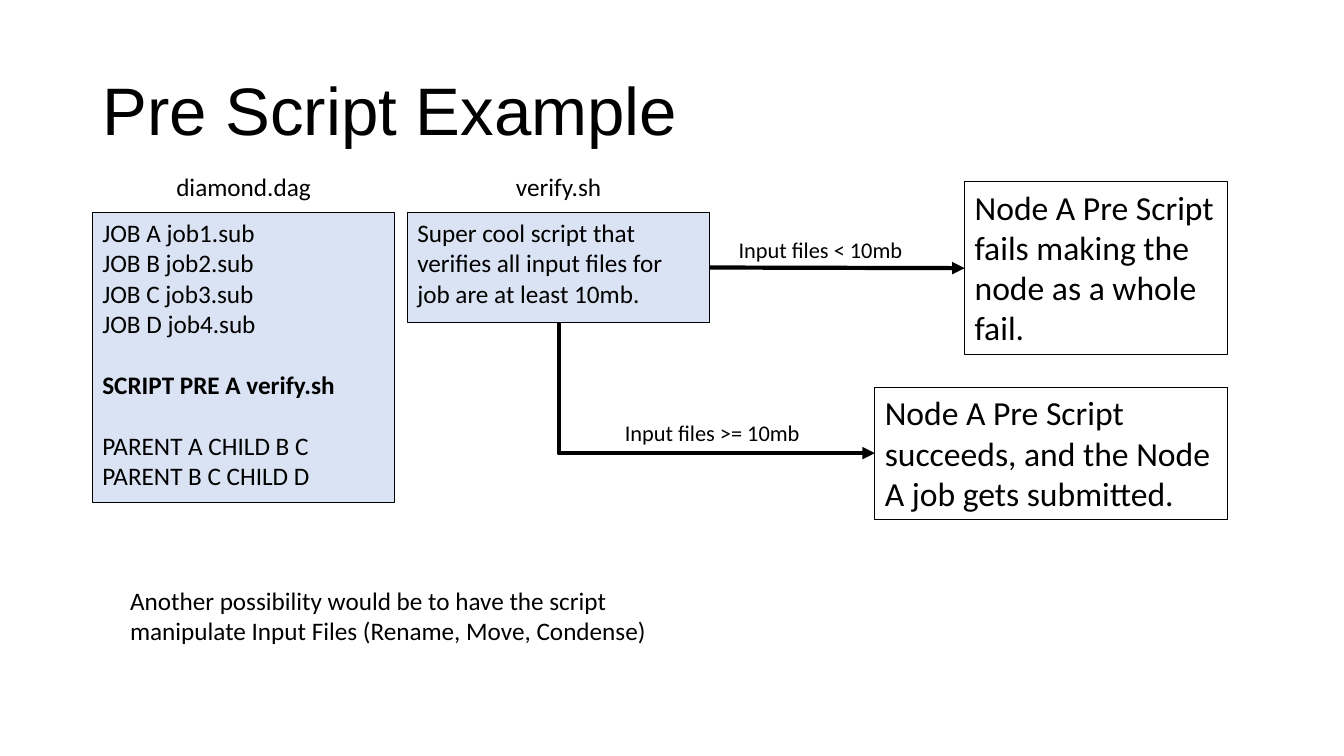
from dataclasses import dataclass

from lxml import etree
from pptx import Presentation
from pptx.dml.color import RGBColor
from pptx.enum.shapes import MSO_CONNECTOR, MSO_SHAPE
from pptx.enum.text import MSO_ANCHOR, PP_ALIGN
from pptx.oxml.ns import qn
from pptx.util import Inches, Pt

RECT = MSO_SHAPE.RECTANGLE
STRAIGHT, ELBOW = MSO_CONNECTOR.STRAIGHT, MSO_CONNECTOR.ELBOW
LEFT, CENTER = PP_ALIGN.LEFT, PP_ALIGN.CENTER
TOP, MIDDLE = MSO_ANCHOR.TOP, MSO_ANCHOR.MIDDLE
BOTTOM_SITE, LEFT_SITE, RIGHT_SITE = 2, 1, 3
COLS, ROWS = 32, 18


@dataclass
class Theme:
    ink: RGBColor = RGBColor(0, 0, 0)
    tint: RGBColor = RGBColor(0xDA, 0xE3, 0xF3)
    head_font: str = "Arial"
    font: str = "Calibri"
    head: int = 48
    large: int = 24
    body: int = 18
    small: int = 16
    gap: int = 22  # one line of body text
    edge: float = 1
    thin: float = 0.75
    thick: float = 3


def write(shape, text, *, size, color, font, align=LEFT, anchor=TOP,
          space=None, bold=(), gaps=(), gap=0):
    """Fill a shape, one paragraph a line; bold and gaps hold line numbers."""
    frame = shape.text_frame
    frame.word_wrap = True
    frame.vertical_anchor = anchor
    frame.text = text
    for num, para in enumerate(frame.paragraphs):
        para.alignment = align
        if space:
            para.line_spacing = space
        if num in gaps:
            para.space_before = Pt(gap)
        face = para.font
        face.name, face.size, face.bold = font, Pt(size), num in bold
        face.color.rgb = color


class Deck:
    def __init__(self, theme):
        self.theme = theme
        self.file = Presentation()
        self.file.slide_width = Inches(13.33)
        self.file.slide_height = Inches(7.5)
        self.col = self.file.slide_width / COLS
        self.row = self.file.slide_height / ROWS
        slide = self.file.slides.add_slide(self.file.slide_layouts[6])
        self.shapes = slide.shapes

    def place(self, x, y, w, h):
        return (round(x * self.col), round(y * self.row),
                round(w * self.col), round(h * self.row))

    def style(self, **form):
        base = {"size": self.theme.body, "color": self.theme.ink,
                "font": self.theme.font, "gap": self.theme.gap}
        return base | form

    def text(self, spot, words, **form):
        write(self.shapes.add_textbox(*self.place(*spot)), words,
              **self.style(**form))

    def box(self, spot, words, fill=None, edge=1, **form):
        shape = self.shapes.add_shape(RECT, *self.place(*spot))
        shape.shadow.inherit = False
        if fill is None:
            shape.fill.background()
        else:
            shape.fill.solid()
            shape.fill.fore_color.rgb = fill
        shape.line.color.rgb = self.theme.ink
        shape.line.width = Pt(edge)
        write(shape, words, **self.style(**form))
        return shape

    def panel(self, spot, name, words, **form):
        """A tinted box with its file name centred above."""
        x, y, w, _ = spot
        self.text((x, y - 1.1, w, 0.96), name, align=CENTER)
        return self.box(spot, words, self.theme.tint, self.theme.edge, **form)

    def arrow(self, start, end, kind, site):
        line = self.shapes.add_connector(kind, 0, 0, 0, 0)
        line.begin_connect(start, site)
        line.end_connect(end, LEFT_SITE)
        line.line.color.rgb = self.theme.ink
        line.line.width = Pt(self.theme.thick)
        props = line._element.spPr
        etree.SubElement(props.find(qn("a:ln")), qn("a:tailEnd"),
                         type="triangle")
        etree.SubElement(props, qn("a:effectLst"))
        if kind == ELBOW:
            self.corner(line, props)

    def corner(self, line, props):
        """Bend once: down first, then right."""
        wide, high = line.width, line.height
        mid_x, mid_y = line.left + wide // 2, line.top + high // 2
        line.left, line.top = mid_x - high // 2, mid_y - wide // 2
        line.width, line.height = high, wide
        frame = props.find(qn("a:xfrm"))
        frame.set("rot", "16200000")
        frame.set("flipH", "1")
        props.find(qn("a:prstGeom")).set("prst", "bentConnector2")


def main():
    theme = Theme()
    deck = Deck(theme)

    # Title
    deck.text((2.2, 0.96, 27.6, 3.48), "Pre Script Example", size=theme.head,
              font=theme.head_font, anchor=MIDDLE, space=0.9)

    # Files
    jobs = [f"JOB {name} job{num}.sub" for num, name in enumerate("ABCD", 1)]
    rules = ["SCRIPT PRE A verify.sh", "PARENT A CHILD B C",
             "PARENT B C CHILD D"]
    deck.panel((2.2, 5.06, 7.2, 6.91), "diamond.dag",
               "\n".join(jobs + rules), bold=(4,), gaps=(4, 5))
    check = deck.panel((9.7, 5.06, 7.2, 2.62), "verify.sh",
                       "Super cool script that verifies all input files "
                       "for job are at least 10mb.")

    # Outcomes
    fail = deck.box((22.97, 4.32, 6.26, 4.13),
                    "Node A Pre Script fails making the node as a whole fail.",
                    edge=theme.thin, size=theme.large)
    done = deck.box((20.83, 9.22, 8.4, 3.14),
                    "Node A Pre Script succeeds, and the Node A job gets "
                    "submitted.", edge=theme.thin, size=theme.large)

    # Branches
    deck.arrow(check, fail, STRAIGHT, RIGHT_SITE)
    deck.arrow(check, done, ELBOW, BOTTOM_SITE)
    deck.text((17.35, 5.5, 4.87, 0.89), "Input files < 10mb", size=theme.small)
    deck.text((14.64, 9.86, 4.87, 0.89), "Input files >= 10mb",
              size=theme.small)

    # Remark
    deck.text((2.86, 13.82, 13.1, 2.42),
              "Another possibility would be to have the script manipulate "
              "Input Files (Rename, Move, Condense)")

    deck.file.save("out.pptx")


if __name__ == "__main__":
    main()
